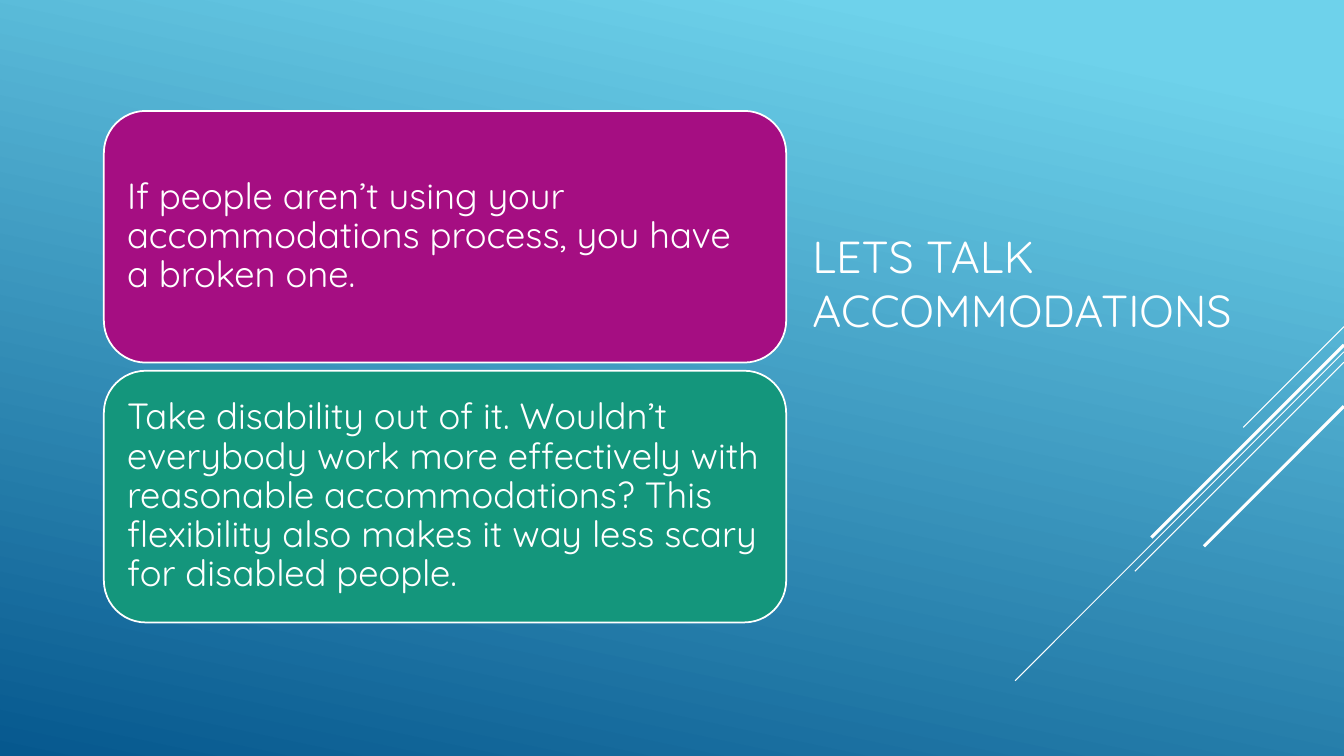
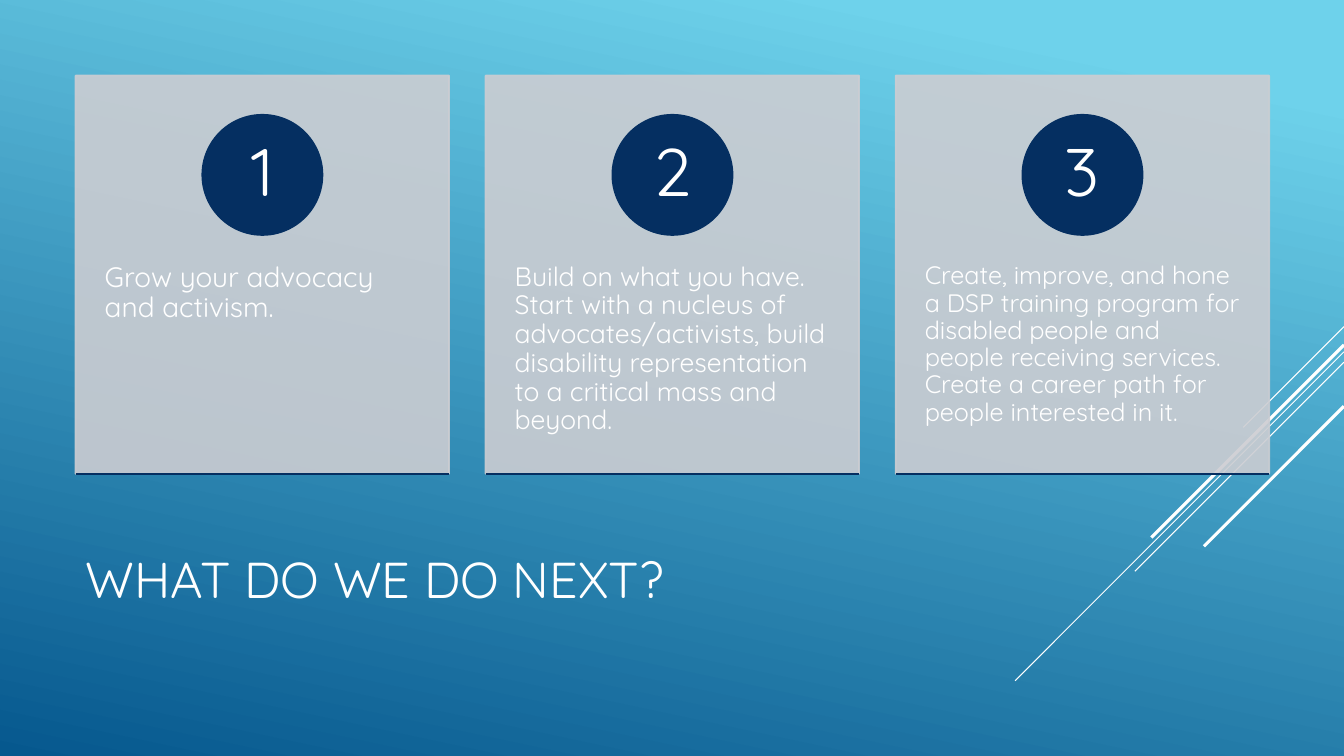
from lxml.etree import SubElement
from pptx import Presentation
from pptx.dml.color import RGBColor
from pptx.enum.shapes import MSO_CONNECTOR, MSO_SHAPE as SHAPE
from pptx.enum.text import MSO_ANCHOR as ANCHOR, PP_ALIGN as ALIGN
from pptx.oxml.ns import qn
from pptx.util import Pt

FONT = "Quicksand"
WHITE, SKY, OCEAN = "FFFFFF", "6ED2EB", "06588E"
NAVY, SILVER, PURPLE, GREEN = "052F61", "CCCDD2", "A50E82", "14967C"
SLIDE_WIDTH, SLIDE_HEIGHT = 960, 540
OUTLINE = 1.25

# Diagonal strokes run from the right edge at 45 degrees: start y, drop, line width
STROKES = [
    (233.3, 72, 0.75),
    (251.3, 234.9, 0.75),
    (258.7, 149.4, 0.75),
    (246.4, 137.6, 2.25),
    (290.2, 100, 2.25),
]

ACCOMMODATIONS_TITLE = "LETS TALK ACCOMMODATIONS"
STATEMENTS = [
    ("If people aren’t using your accommodations process, you have a broken one.", PURPLE),
    ("Take disability out of it. Wouldn’t everybody work more effectively with "
     "reasonable accommodations? This flexibility also makes it way less scary "
     "for disabled people.", GREEN),
]

NEXT_TITLE = "WHAT DO WE DO NEXT?"
STEPS = [
    ("Grow your advocacy and activism.", 20),
    ("Build on what you have. Start with a nucleus of advocates/activists, build "
     "disability representation to a critical mass and beyond.", 19),
    ("Create, improve, and hone a DSP training program for disabled people and "
     "people receiving services. Create a career path for people interested in it.", 18),
]


def rgb(hex_color):
    return RGBColor.from_string(hex_color)


def write(shape, text, size, align=ALIGN.LEFT, anchor=ANCHOR.MIDDLE, spacing=0.9,
          margins=(7.2, 3.6, 7.2, 3.6)):
    """Fill a shape with one white paragraph; margins are left, top, right, bottom."""
    frame = shape.text_frame
    frame.word_wrap = True
    frame.vertical_anchor = anchor
    frame.margin_left, frame.margin_top, frame.margin_right, frame.margin_bottom = map(Pt, margins)
    paragraph = frame.paragraphs[0]
    paragraph.alignment = align
    paragraph.line_spacing = spacing
    run = paragraph.add_run()
    run.text = text
    run.font.name = FONT
    run.font.size = Pt(size)
    run.font.color.rgb = rgb(WHITE)


def add_box(slide, kind, left, top, width, height, fill, line, opacity=100):
    shape = slide.shapes.add_shape(kind, Pt(left), Pt(top), Pt(width), Pt(height))
    shape.shadow.inherit = False
    shape.fill.solid()
    shape.fill.fore_color.rgb = rgb(fill)
    shape.line.color.rgb = rgb(line)
    shape.line.width = Pt(OUTLINE)
    if opacity < 100:
        for color in list(shape._element.spPr.iter(qn("a:srgbClr"))):
            SubElement(color, qn("a:alpha"), val=str(opacity * 1000))
    return shape


def add_line(slide, x1, y1, x2, y2, color, width):
    line = slide.shapes.add_connector(MSO_CONNECTOR.STRAIGHT, Pt(x1), Pt(y1), Pt(x2), Pt(y2))
    line.line.color.rgb = rgb(color)
    line.line.width = Pt(width)
    SubElement(line._element.spPr, qn("a:effectLst"))


def set_background(master):
    fill = master.background.fill
    fill.gradient()
    fill.gradient_angle = 258
    for stop, position, color in zip(fill.gradient_stops, (0.1, 1), (SKY, OCEAN)):
        stop.position = position
        stop.color.rgb = rgb(color)


def add_slide(presentation, title, size, left, top, width, height):
    """Add a slide with the diagonal strokes and a title in the given area."""
    slide = presentation.slides.add_slide(presentation.slide_layouts[6])
    for y, drop, stroke_width in STROKES:
        add_line(slide, SLIDE_WIDTH, y, SLIDE_WIDTH - drop, y + drop, WHITE, stroke_width)
    title_box = slide.shapes.add_textbox(Pt(left), Pt(top), Pt(width), Pt(height))
    write(title_box, title, size, spacing=1.0)
    return slide


def build_accommodations(presentation):
    slide = add_slide(presentation, ACCOMMODATIONS_TITLE, 32, 573.2, 74.2, 342.6, 255.6)
    left, top, width, height, gap = 74.2, 79.2, 487.4, 179.8, 5.8
    for index, (text, color) in enumerate(STATEMENTS):
        panel = add_box(slide, SHAPE.ROUNDED_RECTANGLE, left, top + index * (height + gap),
                        width, height, color, WHITE)
        write(panel, text, 26, margins=(7.8,) * 4)


def build_next_steps(presentation):
    slide = add_slide(presentation, NEXT_TITLE, 36, 54, 353.5, 672, 118.8)
    left, top, width, height, gap = 54, 54, 266.8, 284.4, 26.1
    badge_top, badge_size = 82, 85.8
    for index, (text, size) in enumerate(STEPS):
        x = left + index * (width + gap)
        card = add_box(slide, SHAPE.RECTANGLE, x, top, width, height, SILVER, SILVER, opacity=90)
        write(card, text, size, anchor=ANCHOR.TOP, margins=(20.8, 134, 20.8, 26))
        badge = add_box(slide, SHAPE.OVAL, x + (width - badge_size) / 2, badge_top,
                        badge_size, badge_size, NAVY, NAVY)
        write(badge, str(index + 1), 48, align=ALIGN.CENTER, margins=(6.7, 1, 6.7, 1))
        add_line(slide, x, top + height, x + width, top + height, NAVY, OUTLINE)


def main():
    presentation = Presentation()
    presentation.slide_width = Pt(SLIDE_WIDTH)
    presentation.slide_height = Pt(SLIDE_HEIGHT)
    set_background(presentation.slide_master)
    build_accommodations(presentation)
    build_next_steps(presentation)
    presentation.save("out.pptx")


if __name__ == "__main__":
    main()
